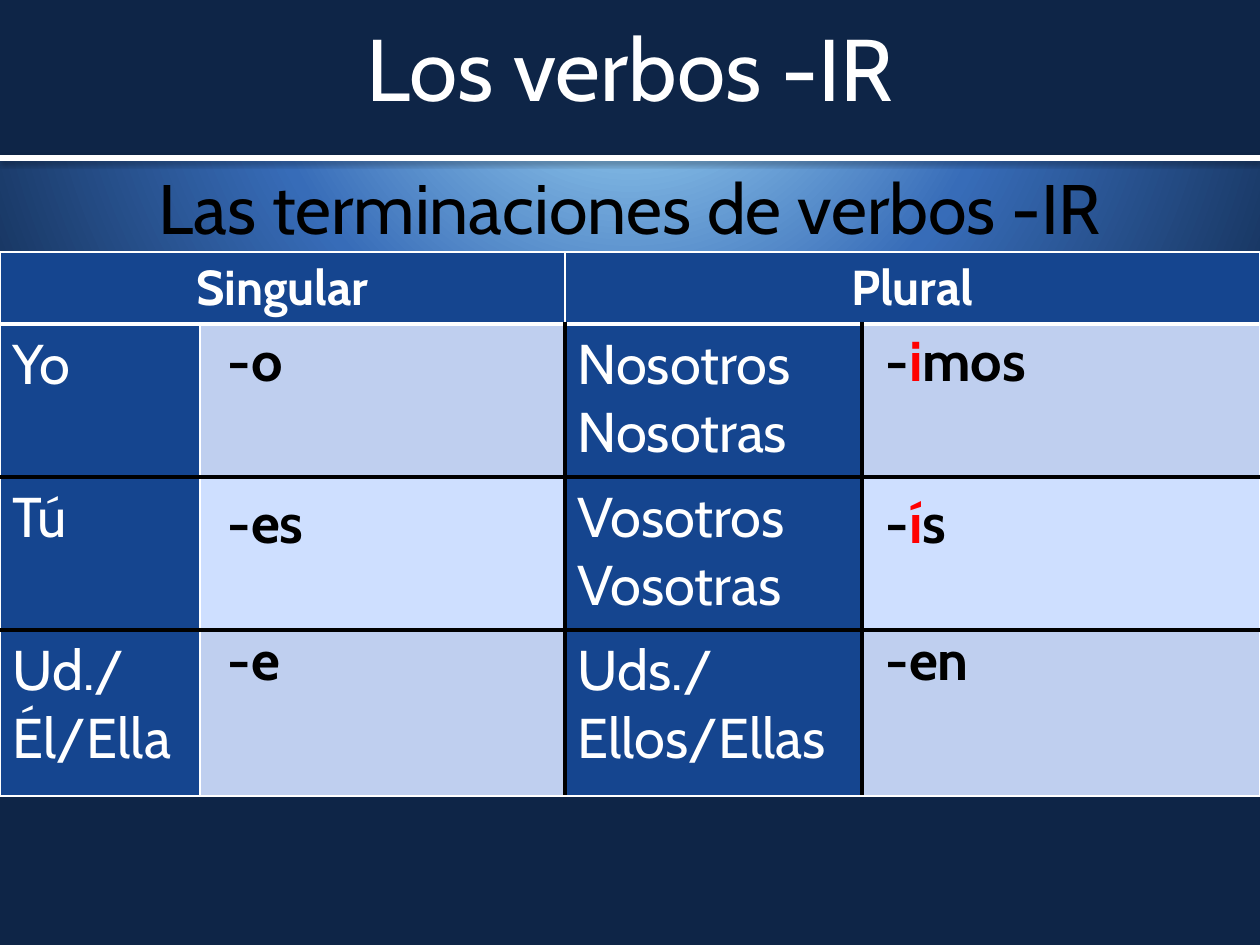
from dataclasses import dataclass

from pptx import Presentation
from pptx.dml.color import RGBColor as RGB
from pptx.enum.shapes import MSO_CONNECTOR as CONN, MSO_SHAPE as SHAPE
from pptx.enum.text import MSO_ANCHOR as ANCHOR, PP_ALIGN as ALIGN
from pptx.oxml import parse_xml
from pptx.oxml.ns import nsdecls
from pptx.util import Emu, Pt

W, H = 1260, 945
SCALE = 914400 / 126
NO_GRID = "{2D5ABB26-0587-4C30-8999-92F81FD0307C}"


@dataclass(frozen=True)
class Theme:
    font: str = "Cabin"
    navy: str = "0E2547"
    blue: str = "15458F"
    bands: tuple = ("BFCFEF", "CEDFFF")
    glow: tuple = ((0, "B1E9FF"), (48, "376CB8"), (100, "0E2547"))
    white: str = "FFFFFF"
    black: str = "000000"
    red: str = "FF0000"
    title: int = 50
    subtitle: int = 40
    header: int = 28
    body: int = 32
    thin: int = 1
    thick: int = 3


def px(n):
    return Emu(round(n * SCALE))


def write(p, text, *, font, size, color, bold=False, align=None):
    if align is not None:
        p.alignment = align
    r = p.add_run()
    r.text = text
    r.font.name = font
    r.font.size = Pt(size)
    r.font.bold = bold
    r.font.color.rgb = RGB.from_string(color)


class Deck:
    def __init__(self, theme):
        self.t = theme
        self.prs = Presentation()
        self.prs.slide_width, self.prs.slide_height = px(W), px(H)
        self.s = self.prs.slides.add_slide(self.prs.slide_layouts[0])

    def background(self):
        stops = "".join(
            f'<a:gs pos="{pos * 1000}"><a:srgbClr val="{color}"/></a:gs>'
            for pos, color in self.t.glow)
        self.s.element.cSld.insert(0, parse_xml(
            f'<p:bg {nsdecls("p", "a")}><p:bgPr><a:gradFill rotWithShape="1">'
            f'<a:gsLst>{stops}</a:gsLst><a:path path="circle">'
            '<a:fillToRect l="50000" t="-80000" r="50000" b="180000"/></a:path>'
            '</a:gradFill><a:effectLst/></p:bgPr></p:bg>'))

    def rect(self, x, y, w, h, color):
        sp = self.s.shapes.add_shape(SHAPE.RECTANGLE, px(x), px(y), px(w), px(h))
        sp.shadow.inherit = False
        sp.fill.solid()
        sp.fill.fore_color.rgb = RGB.from_string(color)
        sp.line.fill.background()

    def placeholder(self, idx, x, y, w, h, text, size, color, anchor):
        sp = self.s.placeholders[idx]
        sp.left, sp.top, sp.width, sp.height = px(x), px(y), px(w), px(h)
        sp.element.getparent().append(sp.element)
        tf = sp.text_frame
        tf.vertical_anchor = anchor
        write(tf.paragraphs[0], text, font=self.t.font, size=size,
              color=color, align=ALIGN.CENTER)

    def line(self, x1, y1, x2, y2):
        sp = self.s.shapes.add_connector(CONN.STRAIGHT, px(x1), px(y1), px(x2), px(y2))
        sp.line.color.rgb = RGB.from_string(self.t.white)
        sp.line.width = Pt(self.t.thick)
        sp.element.spPr.append(parse_xml(
            f'<a:effectLst {nsdecls("a")}><a:outerShdw blurRad="39370" dist="20320" '
            f'dir="5400000"><a:srgbClr val="{self.t.black}"><a:alpha val="38000"/>'
            '</a:srgbClr></a:outerShdw></a:effectLst>'))

    def table(self, x, y, cols, rows):
        tbl = self.s.shapes.add_table(len(rows), len(cols), px(x), px(y),
                                      px(sum(cols)), px(sum(rows))).table
        tbl.first_row = tbl.horz_banding = False
        tbl._tbl.tblPr[0].text = NO_GRID
        for col, w in zip(tbl.columns, cols):
            col.width = px(w)
        for row, h in zip(tbl.rows, rows):
            row.height = px(h)
        return tbl

    def border(self, cell, side, color, width):
        cell._tc.get_or_add_tcPr().append(parse_xml(
            f'<a:ln{side} {nsdecls("a")} w="{Pt(width)}"><a:solidFill>'
            f'<a:srgbClr val="{color}"/></a:solidFill></a:ln{side}>'))

    def verb_grid(self, x, y, cols, rows, headers, pronouns):
        t = self.t
        thin, rule, divider = (t.white, t.thin), (t.white, t.thick), (t.black, t.thick)
        across = (thin, rule, divider, divider, thin)
        tbl = self.table(x, y, cols, rows)
        for i in range(len(rows)):
            down = (thin, thin, divider, divider, thin) if i else (thin,) * 5
            for j in range(len(cols)):
                cell = tbl.cell(i, j)
                sides = (("L", down[j]), ("R", down[j + 1]),
                         ("T", across[i]), ("B", across[i + 1]))
                for side, style in sides:
                    self.border(cell, side, *style)
                label = i == 0 or j % 2 == 0
                cell.fill.solid()
                cell.fill.fore_color.rgb = RGB.from_string(
                    t.blue if label else t.bands[(i - 1) % 2])
        for k, text in enumerate(headers):
            cell = tbl.cell(0, 2 * k)
            cell.merge(tbl.cell(0, 2 * k + 1))
            write(cell.text_frame.paragraphs[0], text, font=t.font, size=t.header,
                  color=t.white, bold=True, align=ALIGN.CENTER)
        for i, pair in enumerate(pronouns, 1):
            for k, names in enumerate(pair):
                tf = tbl.cell(i, 2 * k).text_frame
                for n, name in enumerate(names):
                    p = tf.add_paragraph() if n else tf.paragraphs[0]
                    write(p, name, font=t.font, size=t.body, color=t.white)

    def ending(self, x, y, w, h, parts):
        cell = self.table(x, y, [w], [h]).cell(0, 0)
        cell.fill.background()
        for n, part in enumerate(parts):
            write(cell.text_frame.paragraphs[0], part, font=self.t.font,
                  size=self.t.body, bold=True,
                  color=self.t.red if n == 1 else self.t.black)


def main():
    t = Theme()
    deck = Deck(t)
    deck.background()
    deck.rect(0, 0, W, 158, t.navy)
    deck.placeholder(1, 0, 158, W, 655, "Las terminaciones de verbos -IR",
                     t.subtitle, t.black, ANCHOR.TOP)
    deck.line(0, 158, W, 158)
    deck.placeholder(0, 0, 0, W, 134, "Los verbos -IR",
                     t.title, t.white, ANCHOR.MIDDLE)
    deck.verb_grid(0, 252, (200, 365, 297, 398), (72, 153, 153, 166),
                   ("Singular", "Plural"),
                   ((("Yo",), ("Nosotros", "Nosotras")),
                    (("Tú",), ("Vosotros", "Vosotras")),
                    (("Ud./Él/Ella",), ("Uds./Ellos/Ellas",))))
    tops = (321, 483, 620)
    endings = (
        (215, ((310, 80, ("-o",)), (295, 80, ("-es",)), (310, 84, ("-e",)))),
        (873, ((355, 86, ("-", "i", "mos")), (318, 80, ("-", "í", "s")),
               (302, 80, ("-en",)))),
    )
    for x, column in endings:
        for y, (w, h, parts) in zip(tops, column):
            deck.ending(x, y, w, h, parts)
    deck.prs.save("out.pptx")


if __name__ == "__main__":
    main()
